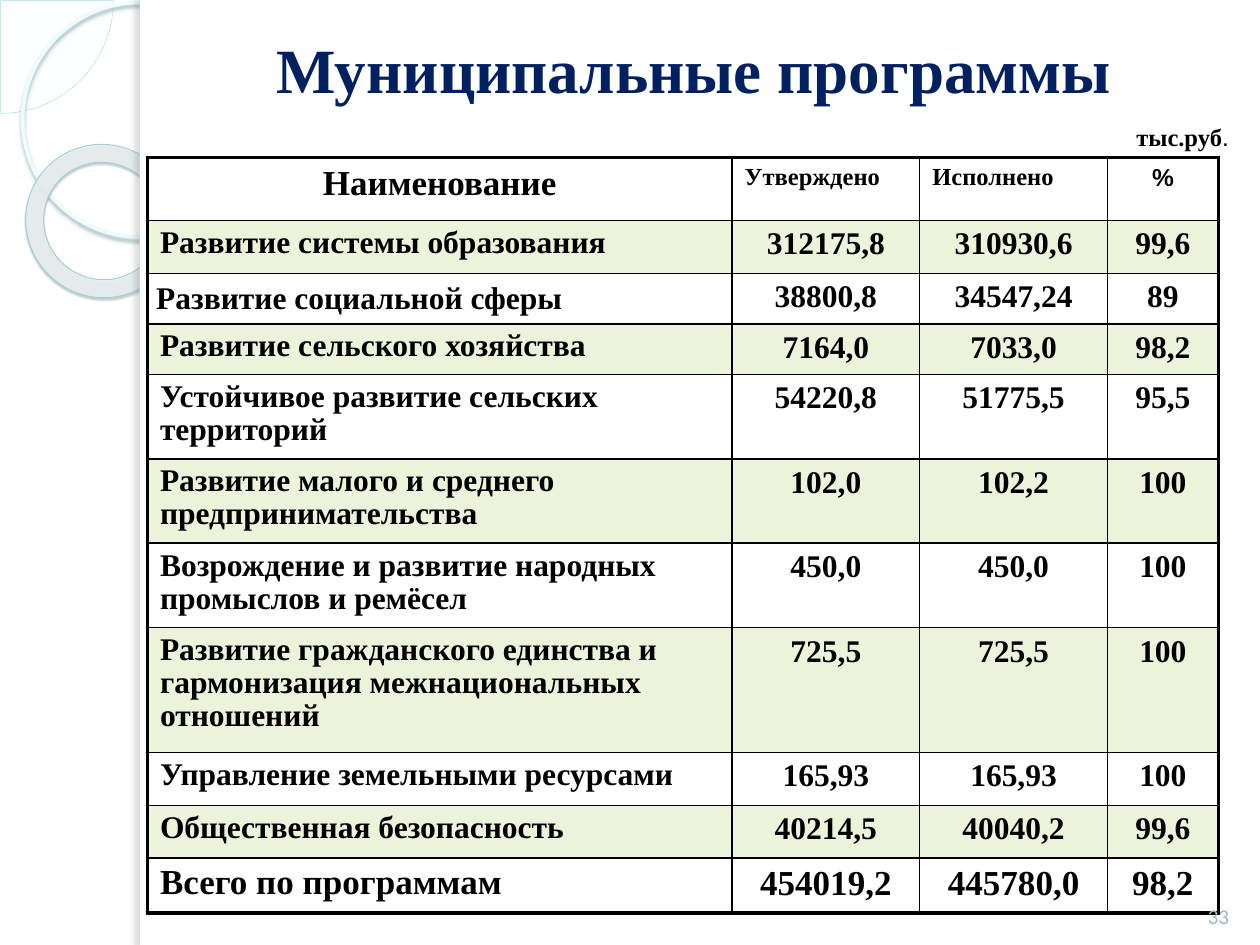
from lxml.etree import SubElement
from pptx import Presentation
from pptx.dml.color import RGBColor
from pptx.enum.shapes import MSO_SHAPE
from pptx.enum.text import MSO_ANCHOR, PP_ALIGN
from pptx.oxml.ns import qn
from pptx.util import Inches, Pt

SERIF = "Times New Roman"
BLACK, WHITE, GREEN = "000000", "FFFFFF", "EDF3DB"
LEFT, MID = PP_ALIGN.LEFT, PP_ALIGN.CENTER

COLS = [4.64, 1.49, 1.49, 0.88]
HEADS = ["Наименование", "Утверждено", "Исполнено", "%"]
# Row height, then the cells
ROWS = [
    (0.42, "Развитие системы образования", "312175,8", "310930,6", "99,6"),
    (0.4, "Развитие социальной сферы", "38800,8", "34547,24", "89"),
    (0.39, "Развитие сельского хозяйства", "7164,0", "7033,0", "98,2"),
    (0.65, "Устойчивое развитие сельских территорий", "54220,8", "51775,5", "95,5"),
    (0.66, "Развитие малого и среднего предпринимательства", "102,0", "102,2", "100"),
    (0.65, "Возрождение и развитие народных промыслов и ремёсел", "450,0", "450,0", "100"),
    (0.99, "Развитие гражданского единства и гармонизация межнациональных отношений",
     "725,5", "725,5", "100"),
    (0.42, "Управление земельными ресурсами", "165,93", "165,93", "100"),
    (0.42, "Общественная безопасность", "40214,5", "40040,2", "99,6"),
    (0.42, "Всего по программам", "454019,2", "445780,0", "98,2"),
]
SOCIAL = 2  # the row whose name sits in the middle with narrow margins


def rgb(code):
    return RGBColor.from_string(code)


def write(frame, text, size=18, font=SERIF, color=BLACK, bold=True,
          align=LEFT, spacing=None):
    """Add a run to the first paragraph of a text frame."""
    para = frame.paragraphs[0]
    para.alignment = align
    if spacing:
        para.line_spacing = spacing
    run = para.add_run()
    run.text = text
    run.font.size, run.font.name, run.font.bold = Pt(size), font, bold
    run.font.color.rgb = rgb(color)


def label(slide, box, anchor=MSO_ANCHOR.TOP, wrap=True):
    frame = slide.shapes.add_textbox(*map(Inches, box)).text_frame
    frame.word_wrap = wrap
    frame.vertical_anchor = anchor
    return frame


def shade(shape, color, alpha, blur, dist, angle):
    """Give a shape an outer shadow; alpha in percent, lengths in points."""
    effects = shape._element.spPr.find(qn("a:effectLst"))
    outer = SubElement(effects, qn("a:outerShdw"), blurRad=str(Pt(blur)),
                       dist=str(Pt(dist)), dir=str(angle * 60000), rotWithShape="0")
    tint = SubElement(outer, qn("a:srgbClr"), val=color)
    SubElement(tint, qn("a:alpha"), val=str(alpha * 1000))


def form(slide, kind, box, fill=None, alpha=100, line=None, width=1, shadow=None):
    shape = slide.shapes.add_shape(kind, *map(Inches, box))
    shape.shadow.inherit = False
    if fill:
        shape.fill.solid()
        shape.fill.fore_color.rgb = rgb(fill)
        if alpha < 100:
            tint = shape._element.spPr.find(qn("a:solidFill"))[0]
            SubElement(tint, qn("a:alpha"), val=str(alpha * 1000))
    else:
        shape.fill.background()
    if line:
        shape.line.color.rgb = rgb(line)
        shape.line.width = Pt(width)
    else:
        shape.line.fill.background()
    if shadow:
        shade(shape, *shadow)
    return shape


def decor(slide, edge, wide, high):
    """Rings on the left, covered by the white page from edge on."""
    pie = form(slide, MSO_SHAPE.PIE, (-0.89, -0.89, 1.79, 1.79), "F8FEFF", 33,
               "AFDBE2", 0.25)
    pie.adjustments[0], pie.adjustments[1] = 0, 54
    form(slide, MSO_SHAPE.OVAL, (0.18, 0.02, 1.86, 1.86), line="EDFCFF", width=2.15,
         shadow=("9CB9BE", 85, 2, 2, 90))
    ring = form(slide, MSO_SHAPE.DONUT, (0.2, 1.15, 1.23, 1.21), "EAF0F2", 85,
                "A1CFD6", 0.58, ("4B5E61", 35, 1, 1.2, 75))
    ring.adjustments[0] = 0.118
    ring.rotation = 38.6
    form(slide, MSO_SHAPE.RECTANGLE, (edge, 0, wide - edge, high), WHITE)
    form(slide, MSO_SHAPE.RECTANGLE, (edge, 0, 0.08, high), WHITE,
         shadow=("6C7A7C", 25, 3, 3, 180))


def border(cell, widths):
    """Draw left, right, top and bottom lines ahead of the cell's fill."""
    props = cell._tc.get_or_add_tcPr()
    for spot, (side, width) in enumerate(zip("LRTB", widths)):
        line = SubElement(props, qn("a:ln" + side), w=str(Pt(width)))
        SubElement(SubElement(line, qn("a:solidFill")), qn("a:srgbClr"), val=BLACK)
        props.insert(spot, line)


def grid(slide, left, top):
    heights = [0.5] + [row[0] for row in ROWS]
    texts = [HEADS] + [row[1:] for row in ROWS]
    last, end = len(texts) - 1, len(COLS) - 1
    box = (left, top, sum(COLS), sum(heights))
    table = slide.shapes.add_table(last + 1, end + 1, *map(Inches, box)).table
    for col, width in zip(table.columns, COLS):
        col.width = Inches(width)
    for r, (height, row) in enumerate(zip(heights, texts)):
        table.rows[r].height = Inches(height)
        for c, text in enumerate(row):
            cell = table.cell(r, c)
            if r == 0:
                cell.fill.background()
            else:
                cell.fill.solid()
                # Odd rows are green up to the last
                cell.fill.fore_color.rgb = rgb(GREEN if r % 2 else WHITE)
            outer = (c == 0, c == end, r == 0, r == last)
            border(cell, [2.25 if edge else 1 for edge in outer])
            if (r, c) == (SOCIAL, 0):
                cell.vertical_anchor = MSO_ANCHOR.MIDDLE
                cell.margin_left = Inches(0.07)
                cell.margin_right = cell.margin_top = Inches(0.01)
                cell.margin_bottom = 0
            if r == 0:
                write(cell.text_frame, text, size=14 if c else 20,
                      font="Arial" if c == end else SERIF,
                      align=MID if c in (0, end) else LEFT)
            else:
                write(cell.text_frame, text, size=20 if r == last else 18,
                      align=MID if c else LEFT, spacing=None if c else 0.95)


def main():
    deck = Presentation()
    deck.slide_width, deck.slide_height = Inches(10), Inches(7.5)
    slide = deck.slides.add_slide(deck.slide_layouts[6])
    decor(slide, 1.11, 10, 7.5)
    # Title
    title = label(slide, (1.42, 0.17, 8.17, 0.75), MSO_ANCHOR.MIDDLE)
    write(title, "Муниципальные программы", size=36, color="002060", align=MID)
    grid(slide, 1.17, 1.25)
    # Page number and unit
    page = label(slide, (9.42, 6.9, 0.5, 0.52), MSO_ANCHOR.BOTTOM)
    write(page, "33", size=12, font="Calibri", color="97BDC3", bold=False, align=MID)
    unit = label(slide, (8.92, 0.92, 0.96, 0.34), wrap=False)
    write(unit, "тыс.руб", size=14)
    write(unit, ".", size=14, font="Arial", bold=False)
    deck.save("out.pptx")


if __name__ == "__main__":
    main()
